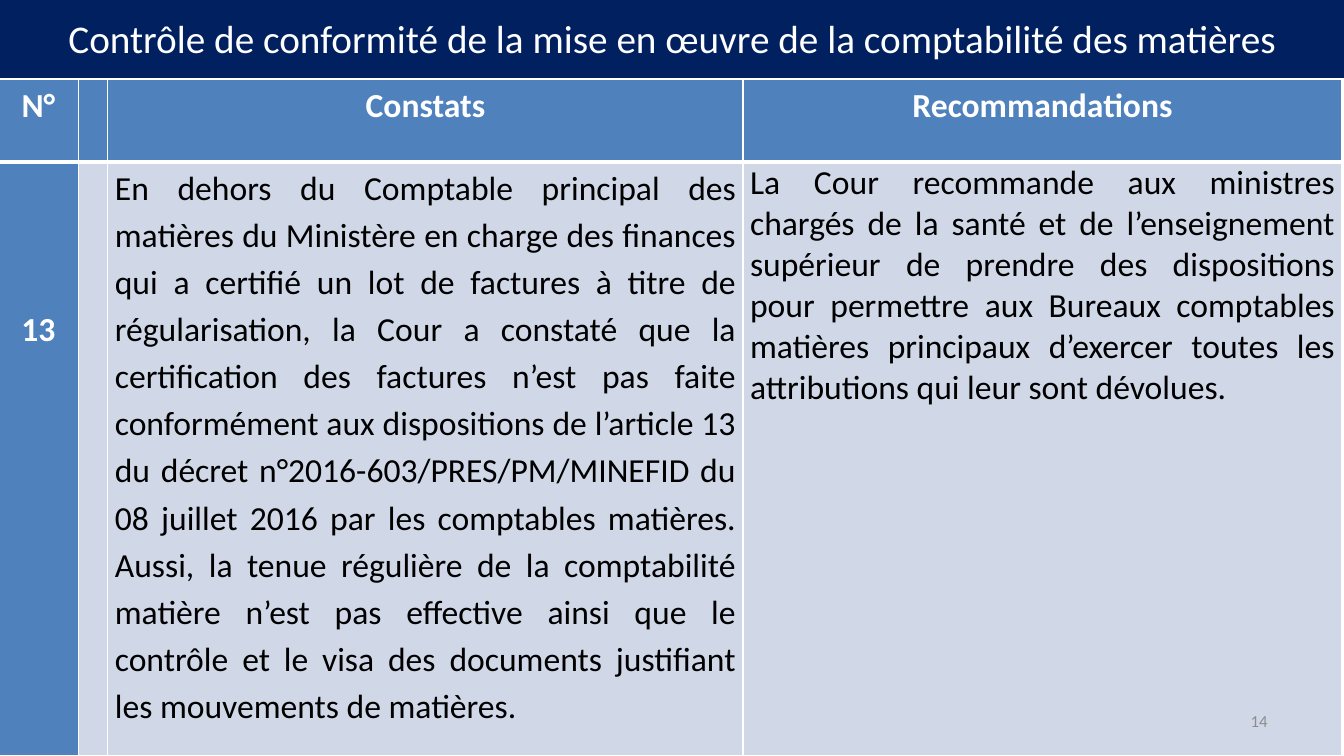
from dataclasses import dataclass

from lxml import etree
from pptx import Presentation
from pptx.dml.color import RGBColor
from pptx.enum import shapes, text
from pptx.oxml import ns
from pptx.util import Inches, Pt


@dataclass(frozen=True)
class Theme:
    font: str = "Calibri"
    navy: str = "002060"
    blue: str = "4F81BD"
    pale: str = "D0D8E8"
    white: str = "FFFFFF"
    black: str = "000000"
    grey: str = "8C8C8C"
    title_size: int = 28
    body_size: int = 24
    number_size: int = 12


class SlideBuilder:
    def __init__(self, slide, theme):
        self.slide = slide
        self.theme = theme

    def add_words(self, frame, words, size, color, align, bold=False, spacing=None):
        frame.word_wrap = True
        paragraph = frame.paragraphs[0]
        paragraph.alignment = align
        if spacing:
            paragraph.line_spacing = spacing
        run = paragraph.add_run()
        run.text = words
        run.font.name = self.theme.font
        run.font.size = Pt(size)
        run.font.bold = bold
        run.font.color.rgb = RGBColor.from_string(color)

    def banner(self, words, left, top, width, height):
        band = self.slide.shapes.add_shape(
            shapes.MSO_SHAPE.RECTANGLE,
            Inches(left), Inches(top), Inches(width), Inches(height))
        band.shadow.inherit = False
        navy = RGBColor.from_string(self.theme.navy)
        band.fill.solid()
        band.fill.fore_color.rgb = navy
        band.line.color.rgb = navy
        band.line.width = Pt(2)
        band.text_frame.vertical_anchor = text.MSO_ANCHOR.MIDDLE
        self.add_words(band.text_frame, words, self.theme.title_size,
                       self.theme.white, text.PP_ALIGN.CENTER)

    def label(self, words, left, top, width, height):
        box = self.slide.shapes.add_textbox(
            Inches(left), Inches(top), Inches(width), Inches(height))
        box.text_frame.vertical_anchor = text.MSO_ANCHOR.MIDDLE
        self.add_words(box.text_frame, words, self.theme.number_size,
                       self.theme.grey, text.PP_ALIGN.RIGHT)

    def table(self, left, top, widths, heights):
        grid = self.slide.shapes.add_table(
            len(heights), len(widths), Inches(left), Inches(top),
            Inches(sum(widths)), Inches(sum(heights))).table
        for column, width in zip(grid.columns, widths):
            column.width = Inches(width)
        for row, height in zip(grid.rows, heights):
            row.height = Inches(height)
        return grid

    def cell(self, cell, fill, borders, words="", color=None,
             align=None, bold=False, spacing=None, drop=0):
        cell.margin_left = cell.margin_right = Inches(0.07)
        cell.margin_top = Inches(drop)
        cell.margin_bottom = 0
        cell.fill.solid()
        cell.fill.fore_color.rgb = RGBColor.from_string(fill)
        properties = cell._tc.get_or_add_tcPr()
        for index, (side, points) in enumerate(borders.items()):
            line = etree.Element(ns.qn(f"a:ln{side}"), w=str(Pt(points)))
            paint = etree.SubElement(line, ns.qn("a:solidFill"))
            etree.SubElement(paint, ns.qn("a:srgbClr"), val=self.theme.white)
            properties.insert(index, line)
        if words:
            self.add_words(cell.text_frame, words, self.theme.body_size,
                           color, align, bold, spacing)


def main():
    presentation = Presentation()
    presentation.slide_width = Inches(13.33)
    presentation.slide_height = Inches(7.5)
    theme = Theme()
    page = SlideBuilder(
        presentation.slides.add_slide(presentation.slide_layouts[6]), theme)

    page.banner("Contrôle de conformité de la mise en œuvre de la comptabilité des matières",
                0, 0, 13.33, 0.76)

    findings = page.table(-0.02, 0.79, [0.8, 0.29, 6.3, 5.94], [0.82, 5.89])
    header_borders = {"L": 1, "R": 1, "T": 1, "B": 3}
    body_borders = {"L": 1, "R": 1, "T": 3, "B": 1}
    center, justify = text.PP_ALIGN.CENTER, text.PP_ALIGN.JUSTIFY

    for column, heading in enumerate(["N°", "", "Constats", "Recommandations"]):
        page.cell(findings.cell(0, column), theme.blue, header_borders, heading,
                  theme.white, center, bold=True, spacing=1.15)

    constat = (
        "En dehors du Comptable principal des matières du Ministère en charge des "
        "finances qui a certifié un lot de factures à titre de régularisation, la Cour "
        "a constaté que la certification des factures n’est pas faite conformément aux "
        "dispositions de l’article 13 du décret n°2016-603/PRES/PM/MINEFID du "
        "08 juillet 2016 par les comptables matières. Aussi, la tenue régulière de la "
        "comptabilité matière n’est pas effective ainsi que le contrôle et le visa des "
        "documents justifiant les mouvements de matières.")
    recommandation = (
        "La Cour recommande aux ministres chargés de la santé et de l’enseignement "
        "supérieur de prendre des dispositions pour permettre aux Bureaux comptables "
        "matières principaux d’exercer toutes les attributions qui leur sont dévolues.")

    page.cell(findings.cell(1, 0), theme.blue, body_borders, "13",
              theme.white, center, bold=True, spacing=1.15, drop=1.4)
    page.cell(findings.cell(1, 1), theme.pale, body_borders)
    page.cell(findings.cell(1, 2), theme.pale, body_borders, constat,
              theme.black, justify, spacing=1.15)
    page.cell(findings.cell(1, 3), theme.pale, body_borders, recommandation,
              theme.black, justify)

    page.label("14", 9.56, 6.95, 3.11, 0.4)
    presentation.save("out.pptx")


if __name__ == "__main__":
    main()
